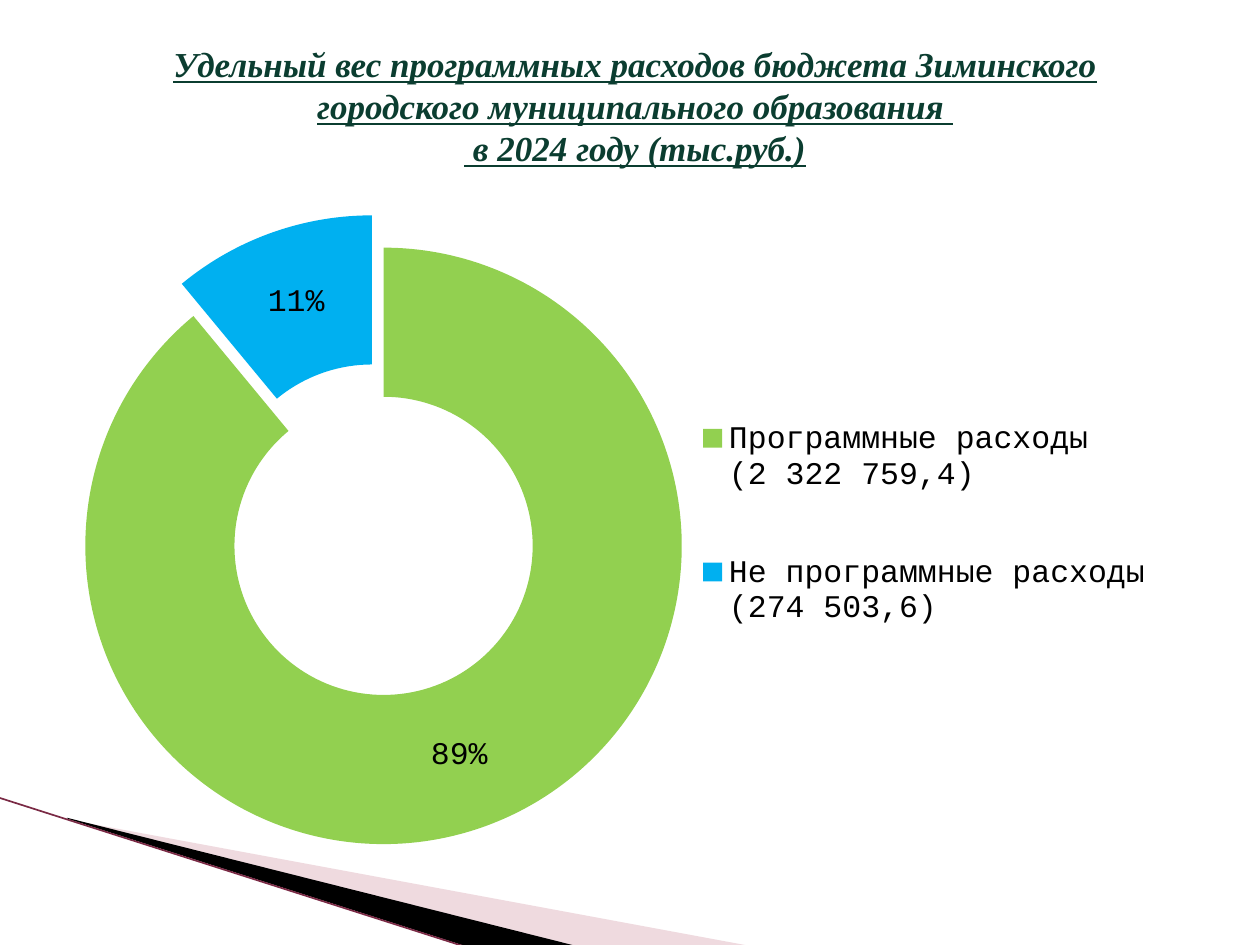
from lxml import etree
from pptx import Presentation
from pptx import util as u
from pptx.chart.data import CategoryChartData
from pptx.dml.color import RGBColor
from pptx.enum import chart as ch, shapes, text
from pptx.oxml import parse_xml
from pptx.oxml.ns import nsdecls, qn

Pt = u.Pt

COLORS = {
    "title": "0B3D30", "text": "000000", "program": "92D050",
    "other": "00B0F0", "pale": "D8A3AF", "black": "000000", "edge": "7A2A45",
}
TITLE = [
    "Удельный вес программных расходов бюджета Зиминского "
    "городского муниципального образования ",
    " в 2024 году (тыс.руб.)",
]
EXPENSES = [
    ("Программные расходы\n(2 322 759,4)", 89, "program"),
    ("Не программные расходы (274 503,6)", 11, "other"),
]
# color, opacity in percent, corner points
WEDGES = [
    ("pale", 40, [(39.6, 468.5), (428.4, 540.5), (328.3, 540.5), (39.6, 468)]),
    ("black", 100, [(38.2, 467.3), (329, 540.5), (267.8, 541.2), (38.9, 468)]),
]
EDGE = (-0.7, 455.8, 267.1, 541.4)
TITLE_BOX = (59.4, 15.1, 607, 90.7)
CHART_BOX = (31, 100.1, 652.3, 402.5)
PLOT = {"x": 0.027, "y": 0.103, "w": 0.523, "h": 0.847}
LEGEND = {"x": 0.547, "y": 0.262, "w": 0.43, "h": 0.469}
EXPLOSION = 23


def rgb(name):
    return RGBColor.from_string(COLORS[name])


def points(values):
    return [Pt(v) for v in values]


def add_wedge(slide, color, opacity, corners):
    builder = slide.shapes.build_freeform(*points(corners[0]), scale=1.0)
    builder.add_line_segments([points(c) for c in corners[1:]], close=True)
    wedge = builder.convert_to_shape()
    wedge.shadow.inherit = False
    wedge.fill.solid()
    wedge.fill.fore_color.rgb = rgb(color)
    wedge.line.fill.background()
    if opacity < 100:
        tint = wedge.fill._xPr.find(".//" + qn("a:srgbClr"))
        etree.SubElement(tint, qn("a:alpha")).set("val", str(opacity * 1000))


def add_edge(slide):
    edge = slide.shapes.add_connector(
        shapes.MSO_CONNECTOR.STRAIGHT, *points(EDGE))
    edge.line.color.rgb = rgb("edge")
    edge.line.width = Pt(0.95)
    etree.SubElement(edge._element.spPr, qn("a:effectLst"))


def add_title(slide):
    title = slide.shapes.add_shape(
        shapes.MSO_SHAPE.ROUNDED_RECTANGLE, *points(TITLE_BOX))
    title.shadow.inherit = False
    title.fill.background()
    title.line.fill.background()
    frame = title.text_frame
    frame.word_wrap = True
    frame.vertical_anchor = text.MSO_ANCHOR.MIDDLE
    for i, line in enumerate(TITLE):
        paragraph = frame.add_paragraph() if i else frame.paragraphs[0]
        paragraph.alignment = text.PP_ALIGN.CENTER
        run = paragraph.add_run()
        run.text = line
        font = run.font
        font.name, font.size = "Times New Roman", Pt(20)
        font.bold = font.italic = font.underline = True
        font.color.rgb = rgb("title")


def place(element, box, inner=False):
    """Give a plot area or legend a manual layout in fractions of the chart."""
    target = '<c:layoutTarget val="inner"/>' if inner else ""
    modes = "".join(f'<c:{k}Mode val="edge"/>' for k in "xy")
    sizes = "".join(f'<c:{k} val="{v}"/>' for k, v in box.items())
    layout = parse_xml(
        f'<c:layout {nsdecls("c")}><c:manualLayout>{target}{modes}{sizes}'
        "</c:manualLayout></c:layout>")
    for old in element.findall(qn("c:layout")):
        element.remove(old)
    position = element.find(qn("c:legendPos"))
    if position is None:
        element.insert(0, layout)
    else:
        position.addnext(layout)


def add_expense_chart(slide):
    data = CategoryChartData()
    data.categories = [name for name, _, _ in EXPENSES]
    data.add_series("Series 1", [share for _, share, _ in EXPENSES])
    chart = slide.shapes.add_chart(
        ch.XL_CHART_TYPE.DOUGHNUT, *points(CHART_BOX), data).chart
    chart.has_title = False
    chart.font.name, chart.font.size = "Courier New", Pt(18)
    chart.font.color.rgb = rgb("text")

    chart.has_legend = True
    chart.legend.position = ch.XL_LEGEND_POSITION.RIGHT
    chart.legend.include_in_layout = False
    place(chart.legend._element, LEGEND)
    place(chart._chartSpace.chart.plotArea, PLOT, inner=True)

    plot = chart.plots[0]
    plot._element.find(qn("c:holeSize")).set("val", "35")
    for i, (_, _, color) in enumerate(EXPENSES):
        point = plot.series[0].points[i]
        point.format.fill.solid()
        point.format.fill.fore_color.rgb = rgb(color)
        point.format.line.fill.background()
    other = plot.series[0]._element.findall(qn("c:dPt"))[-1]
    explosion = parse_xml(
        f'<c:explosion {nsdecls("c")} val="{EXPLOSION}"/>')
    other.find(qn("c:spPr")).addprevious(explosion)

    plot.has_data_labels = True
    labels = plot.data_labels
    labels.show_percentage = True
    labels.show_value = False
    labels.number_format = "0%"
    labels.number_format_is_linked = False


def main():
    deck = Presentation()
    deck.slide_width, deck.slide_height = Pt(720), Pt(540)
    slide = deck.slides.add_slide(deck.slide_layouts[6])
    for wedge in WEDGES:
        add_wedge(slide, *wedge)
    add_edge(slide)
    add_title(slide)
    add_expense_chart(slide)
    deck.save("out.pptx")


if __name__ == "__main__":
    main()
